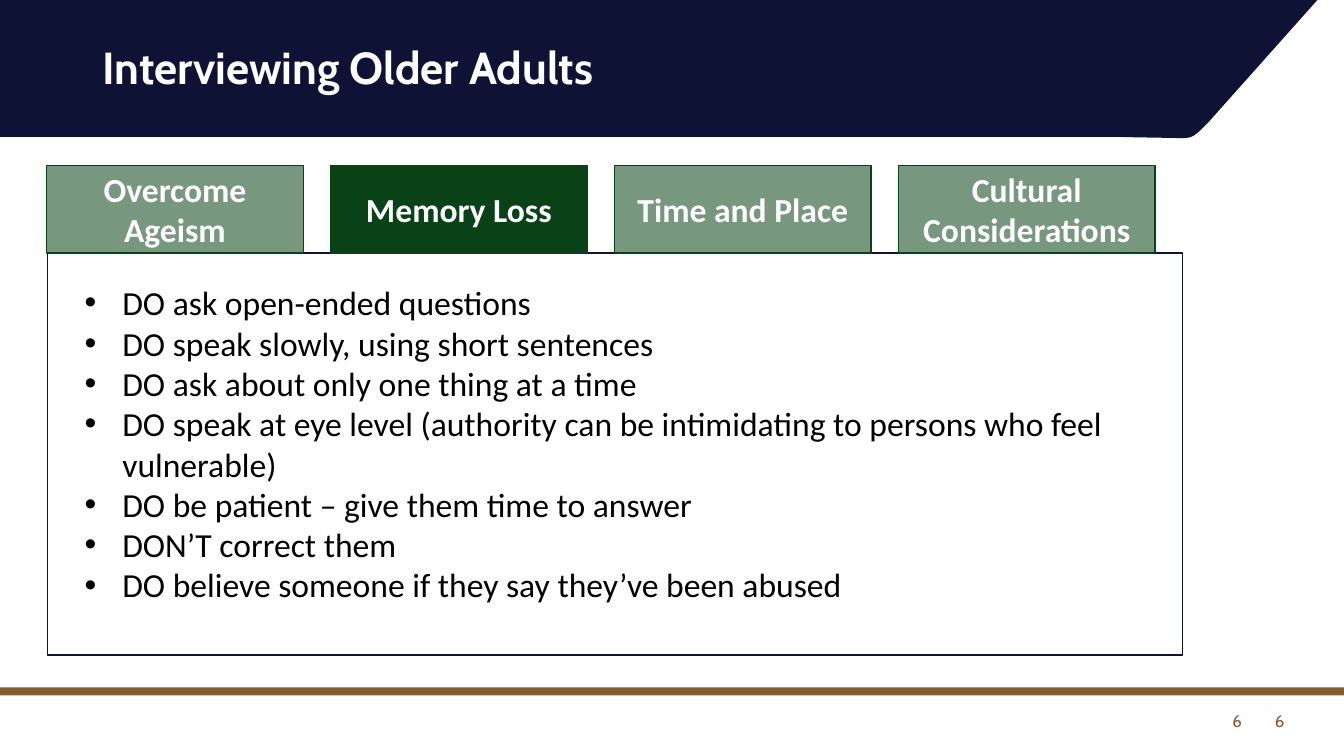
from typing import NamedTuple

from lxml import etree
from pptx import Presentation
from pptx.dml.color import RGBColor
from pptx.enum.shapes import MSO_SHAPE
from pptx.enum.text import MSO_ANCHOR, MSO_AUTO_SIZE, PP_ALIGN
from pptx.oxml.ns import qn
from pptx.util import Pt

RECTANGLE = MSO_SHAPE.RECTANGLE
TOP, MIDDLE = MSO_ANCHOR.TOP, MSO_ANCHOR.MIDDLE
LEFT, CENTER, RIGHT = PP_ALIGN.LEFT, PP_ALIGN.CENTER, PP_ALIGN.RIGHT
NO_AUTOFIT = MSO_AUTO_SIZE.NONE

NAVY = RGBColor(0x0E, 0x13, 0x36)
PANEL_EDGE = RGBColor(0x0F, 0x13, 0x36)
BROWN = RGBColor(0x83, 0x5C, 0x2F)
GREEN = RGBColor(0x09, 0x42, 0x16)
WHITE = RGBColor(0xFF, 0xFF, 0xFF)
BLACK = RGBColor(0x00, 0x00, 0x00)


class Area(NamedTuple):
    left: float
    top: float
    width: float
    height: float


class Style(NamedTuple):
    font: str
    size: float
    color: RGBColor
    bold: bool = False
    align: PP_ALIGN = LEFT


class Tab(NamedTuple):
    label: str
    opacity: int = 55


SLIDE_WIDTH, SLIDE_HEIGHT = 960, 540
TAB_LEFT, TAB_STEP, TAB_WIDTH = 33.3, 202.8, 183.4
TAB_TOP, TAB_HEIGHT = 118, 62.8
BULLET_INDENT = 27

TITLE_STYLE = Style("Cabin", 32, WHITE, True)
TAB_STYLE = Style("Calibri", 24, WHITE, True, CENTER)
BODY_STYLE = Style("Calibri", 24, BLACK)
NUMBER_STYLE = Style("Cabin", 12, BROWN, align=RIGHT)

TABS = [
    Tab("Overcome Ageism"),
    Tab("Memory Loss", 100),
    Tab("Time and Place"),
    Tab("Cultural Considerations"),
]
ADVICE = [
    "DO ask open-ended questions",
    "DO speak slowly, using short sentences",
    "DO ask about only one thing at a time",
    "DO speak at eye level (authority can be intimidating to\u00a0persons who feel vulnerable)",
    "DO be patient – give them time to answer",
    "DON’T correct them",
    "DO believe someone if they say they’ve been abused",
]
NUMBER_AREAS = [Area(708.5, 500.4, 216, 28.8), Area(678.2, 500.4, 216, 28.8)]


def write(para, text: str, style: Style) -> None:
    para.alignment = style.align
    span = para.add_run()
    span.text = text
    span.font.name = style.font
    span.font.size = Pt(style.size)
    span.font.bold = style.bold
    span.font.color.rgb = style.color


def add_bullet(para) -> None:
    properties = para._p.get_or_add_pPr()
    properties.set("marL", str(Pt(BULLET_INDENT)))
    properties.set("indent", str(-Pt(BULLET_INDENT)))
    etree.SubElement(properties, qn("a:buFont"), typeface="Arial")
    etree.SubElement(properties, qn("a:buChar"), char="•")


def add_box(page, area: Area, fill: RGBColor, edge: RGBColor | None = None):
    box = page.shapes.add_shape(RECTANGLE, *map(Pt, area))
    box.shadow.inherit = False
    box.fill.solid()
    box.fill.fore_color.rgb = fill
    if edge is None:
        box.line.fill.background()
    else:
        box.line.color.rgb = edge
        box.line.width = Pt(1)
    return box


def add_text_frame(page, area: Area, anchor: MSO_ANCHOR):
    frame = page.shapes.add_textbox(*map(Pt, area)).text_frame
    frame.word_wrap = True
    frame.auto_size = NO_AUTOFIT
    frame.vertical_anchor = anchor
    return frame


def curve_points(start, control_a, control_b, end, steps: int = 12) -> list:
    points = []
    for step in range(1, steps + 1):
        t = step / steps
        weights = ((1 - t) ** 3, 3 * t * (1 - t) ** 2, 3 * t * t * (1 - t), t ** 3)
        corners = (start, control_a, control_b, end)
        points.append(tuple(
            sum(weight * corner[axis] for weight, corner in zip(weights, corners))
            for axis in (0, 1)
        ))
    return points


def add_banner(page) -> None:
    bend = (841, 98.6)
    corner = curve_points(bend, (851, 98.6), (851.8, 99.4), (864, 86.4))
    outline = [(802, 97.9), bend, *corner, (941, 0), (802, 0)]
    points = [(Pt(x), Pt(y)) for x, y in outline]
    builder = page.shapes.build_freeform(*points[0])
    builder.add_line_segments(points[1:], close=True)
    slant = builder.convert_to_shape()
    slant.shadow.inherit = False
    slant.fill.solid()
    slant.fill.fore_color.rgb = NAVY
    slant.line.fill.background()
    add_box(page, Area(0, 0, 804.2, 97.9), NAVY)


def set_title(page) -> None:
    title = page.shapes.title
    title.element.getparent().append(title.element)
    title.left, title.top, title.width, title.height = map(Pt, Area(66.2, 28.8, 828, 104.4))
    frame = title.text_frame
    frame.vertical_anchor = TOP
    frame.auto_size = NO_AUTOFIT
    para = frame.paragraphs[0]
    para.line_spacing = 0.9
    write(para, "Interviewing Older Adults", TITLE_STYLE)


def add_tab(page, position: int, tab: Tab) -> None:
    area = Area(TAB_LEFT + position * TAB_STEP, TAB_TOP, TAB_WIDTH, TAB_HEIGHT)
    box = add_box(page, area, GREEN, GREEN)
    if tab.opacity < 100:
        color = box.element.spPr.find(qn("a:solidFill")).find(qn("a:srgbClr"))
        etree.SubElement(color, qn("a:alpha"), val=str(tab.opacity * 1000))
    frame = box.text_frame
    frame.word_wrap = True
    frame.vertical_anchor = MIDDLE
    write(frame.paragraphs[0], tab.label, TAB_STYLE)


def add_advice(page) -> None:
    add_box(page, Area(33.8, 180.8, 810.8, 287.2), WHITE, PANEL_EDGE)
    frame = add_text_frame(page, Area(53.3, 198, 778.3, 326.9), TOP)
    for index, advice in enumerate(ADVICE):
        para = frame.add_paragraph() if index else frame.paragraphs[0]
        add_bullet(para)
        write(para, advice, BODY_STYLE)


def main() -> None:
    deck = Presentation()
    deck.slide_width, deck.slide_height = Pt(SLIDE_WIDTH), Pt(SLIDE_HEIGHT)
    page = deck.slides.add_slide(deck.slide_layouts.get_by_name("Title Only"))
    add_banner(page)
    add_box(page, Area(0, 491, SLIDE_WIDTH, 5.8), BROWN)
    set_title(page)
    for area in NUMBER_AREAS:
        write(add_text_frame(page, area, MIDDLE).paragraphs[0], "6", NUMBER_STYLE)
    add_advice(page)
    for position, tab in enumerate(TABS):
        add_tab(page, position, tab)
    deck.save("out.pptx")


if __name__ == "__main__":
    main()
